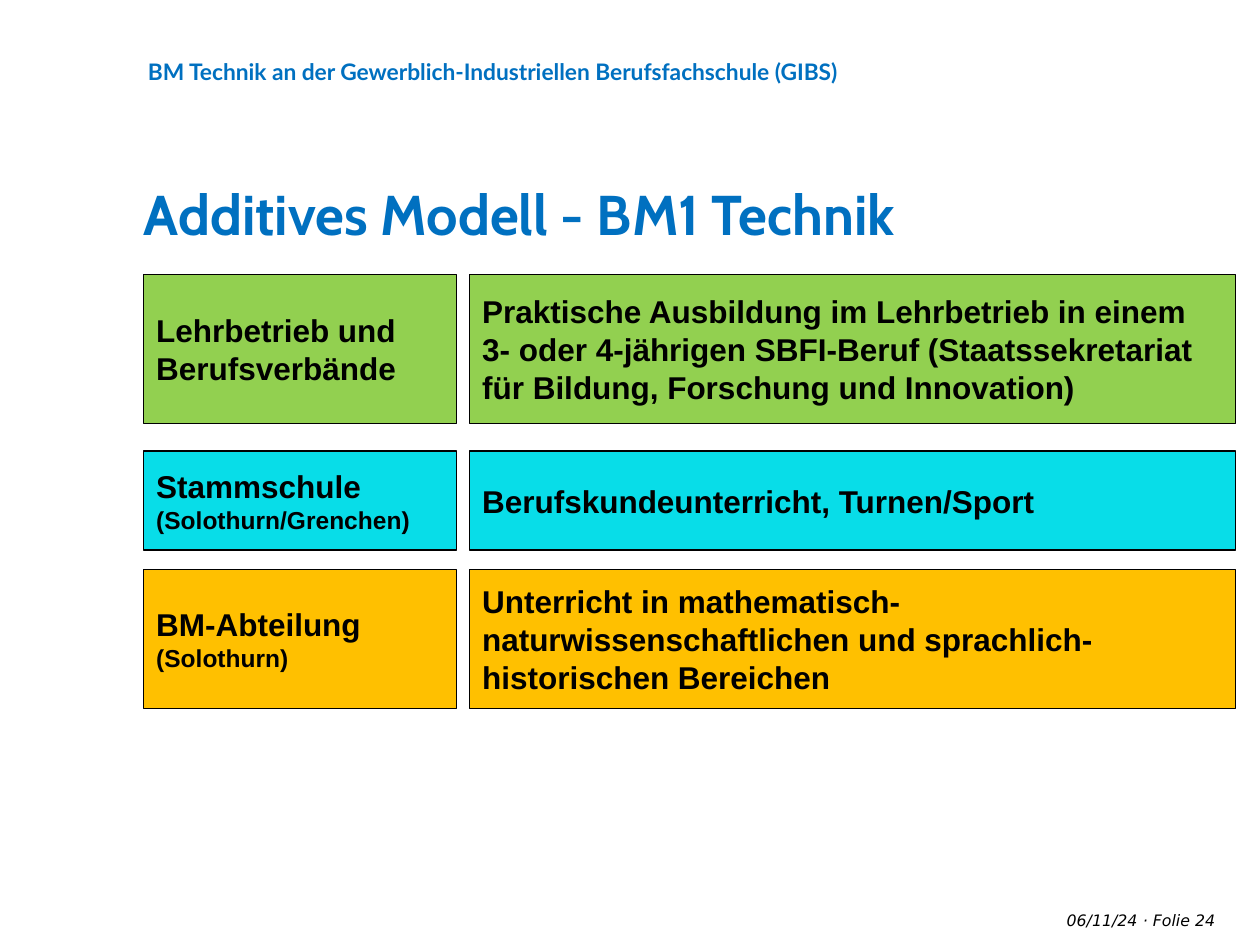
from lxml.etree import SubElement
from pptx import Presentation
from pptx.dml.color import RGBColor
from pptx.enum.shapes import MSO_SHAPE
from pptx.enum.text import MSO_ANCHOR, MSO_AUTO_SIZE, PP_ALIGN
from pptx.oxml.ns import qn
from pptx.util import Cm, Pt

BLACK = RGBColor(0x00, 0x00, 0x00)
BLUE = RGBColor(0x00, 0x70, 0xC0)
GREEN = RGBColor(0x92, 0xD0, 0x50)
CYAN = RGBColor(0x08, 0xDD, 0xE8)
AMBER = RGBColor(0xFF, 0xC0, 0x00)

HEADER_FONT = {"name": "Lato", "size": Pt(13), "bold": True}
TITLE_FONT = {"name": "Cabin", "size": Pt(32), "bold": True}
BOX_FONT = {"name": "Arial", "size": Pt(18), "bold": True}
PLACE_FONT = {**BOX_FONT, "size": Pt(14)}
FOOTER_FONT = {"name": "DejaVu Sans", "size": Pt(9), "italic": True}

LABEL_LEFT, LABEL_WIDTH = 2.9, 6.3
CONTENT_LEFT, CONTENT_WIDTH = 9.47, 15.44

ROWS = [
    (5.54, 3, GREEN, ["Lehrbetrieb und Berufsverbände"],
     ["Praktische Ausbildung im Lehrbetrieb in einem",
      "3- oder 4-jährigen SBFI-Beruf (Staatssekretariat für Bildung, "
      "Forschung und Innovation)"]),
    (9.09, 2, CYAN, ["Stammschule", "(Solothurn/Grenchen)"],
     ["Berufskundeunterricht, Turnen/Sport"]),
    (11.48, 2.8, AMBER, ["BM-Abteilung", "(Solothurn)"],
     ["Unterricht in mathematisch-naturwissenschaftlichen und "
      "sprachlich-historischen Bereichen"]),
]


def set_attributes(target, values):
    """Set every attribute named in the dict on the target."""
    for name, value in values.items():
        setattr(target, name, value)


def add_run(paragraph, text, font, color):
    """Append formatted text to a paragraph."""
    run = paragraph.add_run()
    run.text = text
    set_attributes(run.font, font)
    run.font.color.rgb = color


def place(shape, left, top, width, height):
    """Position a shape by lengths in centimetres."""
    set_attributes(shape, {"left": Cm(left), "top": Cm(top),
                           "width": Cm(width), "height": Cm(height)})


def format_frame(shape, anchor, right_margin=0):
    """Give a text frame tight margins and a fixed size."""
    set_attributes(shape.text_frame, {
        "margin_left": 0, "margin_right": Cm(right_margin),
        "margin_top": 0, "margin_bottom": 0, "word_wrap": True,
        "auto_size": MSO_AUTO_SIZE.NONE, "vertical_anchor": anchor})


def fill_placeholder(placeholder, bounds, text, font):
    """Move a placeholder and fill it with one unbulleted line."""
    place(placeholder, *bounds)
    format_frame(placeholder, MSO_ANCHOR.MIDDLE, 0.25)
    paragraph = placeholder.text_frame.paragraphs[0]
    properties = paragraph._p.get_or_add_pPr()
    set_attributes(paragraph, {"alignment": PP_ALIGN.LEFT, "space_before": Pt(0)})
    properties.set("marL", "0")
    properties.set("indent", "0")
    SubElement(properties, qn("a:buNone"))
    add_run(paragraph, text, font, BLUE)


def add_box(slide, bounds, color):
    """Add an outlined rectangle and return its text frame."""
    shape = slide.shapes.add_shape(MSO_SHAPE.RECTANGLE, *map(Cm, bounds))
    shape.shadow.inherit = False
    shape.fill.solid()
    shape.fill.fore_color.rgb = color
    shape.line.color.rgb = BLACK
    shape.line.width = Pt(0.75)
    set_attributes(shape.text_frame, {"word_wrap": True,
                                      "vertical_anchor": MSO_ANCHOR.MIDDLE})
    shape.text_frame.paragraphs[0].alignment = PP_ALIGN.LEFT
    return shape.text_frame


def add_label(slide, bounds, color, lines):
    """Add a box with a name and an optional smaller place below it."""
    paragraph = add_box(slide, bounds, color).paragraphs[0]
    add_run(paragraph, lines[0], BOX_FONT, BLACK)
    for line in lines[1:]:
        paragraph.add_line_break()
        add_run(paragraph, line, PLACE_FONT, BLACK)


def add_content(slide, bounds, color, texts):
    """Add a box with one paragraph for each text."""
    frame = add_box(slide, bounds, color)
    for index, text in enumerate(texts):
        paragraph = frame.add_paragraph() if index else frame.paragraphs[0]
        paragraph.alignment = PP_ALIGN.LEFT
        add_run(paragraph, text, BOX_FONT, BLACK)


def add_footer(slide, left, width, text, alignment):
    """Add a small italic text at the foot of the slide."""
    box = slide.shapes.add_textbox(Cm(left), Cm(18.36), Cm(width), Cm(0.5))
    format_frame(box, MSO_ANCHOR.TOP)
    paragraph = box.text_frame.paragraphs[0]
    paragraph.alignment = alignment
    add_run(paragraph, text, FOOTER_FONT, BLACK)


def main():
    """Build the slide and save the presentation."""
    presentation = Presentation()
    set_attributes(presentation, {"slide_width": Cm(25.4), "slide_height": Cm(19.05)})
    slide = presentation.slides.add_slide(presentation.slide_layouts[1])
    fill_placeholder(slide.placeholders[1], (2.98, 0.94, 22, 1),
                     "BM Technik an der Gewerblich-Industriellen Berufsfachschule (GIBS)",
                     HEADER_FONT)
    fill_placeholder(slide.shapes.title, (2.9, 3.5, 22, 1.6),
                     "Additives Modell - BM1 Technik", TITLE_FONT)
    for top, height, color, label, content in ROWS:
        add_label(slide, (LABEL_LEFT, top, LABEL_WIDTH, height), color, label)
        add_content(slide, (CONTENT_LEFT, top, CONTENT_WIDTH, height), color, content)
    add_footer(slide, 19.02, 3.91, "06/11/24", PP_ALIGN.RIGHT)
    add_footer(slide, 23.04, 1.93, "· Folie 24", PP_ALIGN.LEFT)
    presentation.save("out.pptx")


if __name__ == "__main__":
    main()
